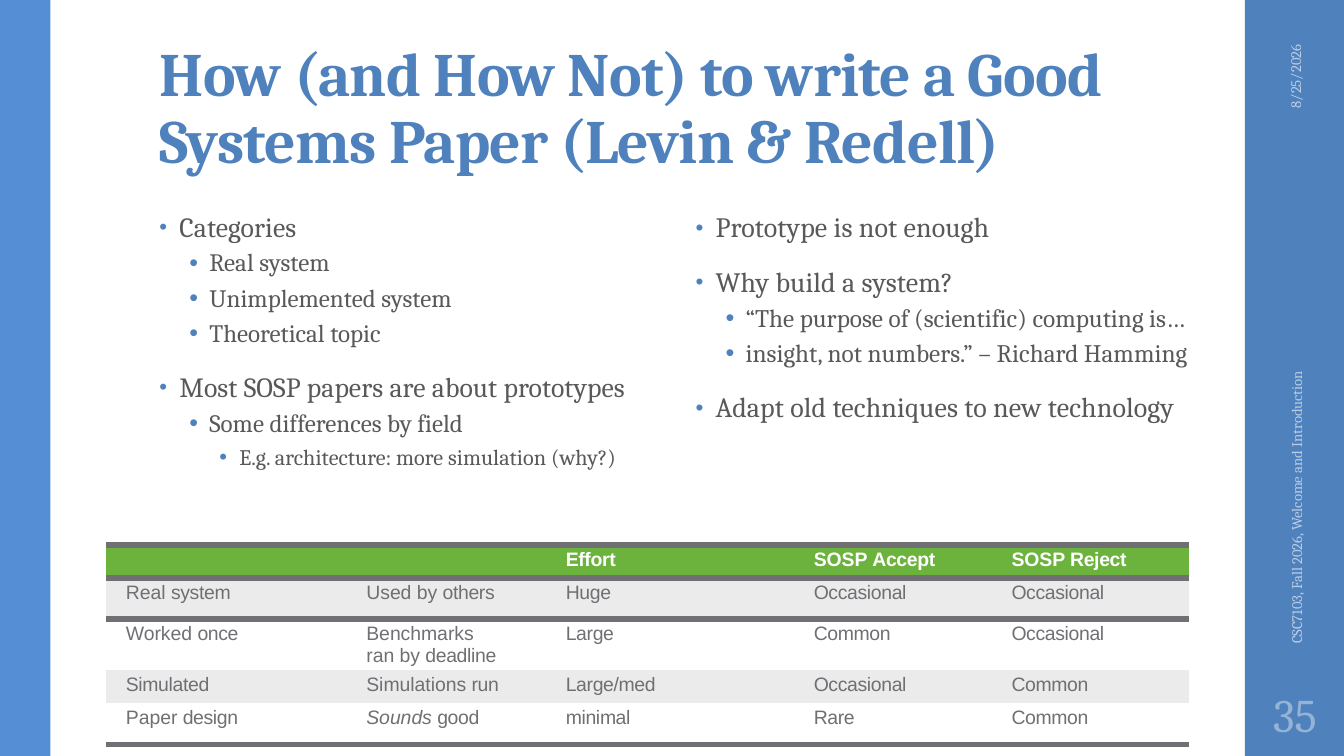
from lxml import etree
from pptx import Presentation
from pptx.dml.color import RGBColor
from pptx.enum import shapes, text
from pptx.oxml.ns import qn
from pptx.util import Pt

# Content
TITLE = "How (and How Not) to write a Good Systems Paper (Levin & Redell)"
COLUMNS = [
    {"box": (50.4, 72.8, 198, 172.8), "sizes": (10, 9, 8), "items": [
        (0, "Categories"),
        (1, "Real system"),
        (1, "Unimplemented system"),
        (1, "Theoretical topic"),
        (0, "Most SOSP papers are about prototypes"),
        (1, "Some differences by field"),
        (2, "E.g. architecture: more simulation (why?)"),
    ]},
    {"box": (243.7, 73, 203, 172.8), "sizes": (10.1, 9.1, 8.1), "items": [
        (0, "Prototype is not enough"),
        (0, "Why build a system?"),
        (1, "“The purpose of (scientific) computing is…"),
        (1, "insight, not numbers.” – Richard Hamming"),
        (0, "Adapt old techniques to new technology"),
    ]},
]
ROWS = [
    ("", "", "Effort", "SOSP Accept", "SOSP Reject"),
    ("Real system", "Used by others", "Huge", "Occasional", "Occasional"),
    ("Worked once", "Benchmarks ran by deadline", "Large", "Common", "Occasional"),
    ("Simulated", "Simulations run", "Large/med", "Occasional", "Common"),
    ("Paper design", "Sounds good", "minimal", "Rare", "Common"),
]
ITALIC = "Sounds "
DATE = "8/25/2026"
FOOTER = "CSC7103, Fall 2026, Welcome and Introduction"
NUMBER = "35"

# Format
W, H = 484.5, 272.5
BAR_LEFT = 448.8
BLUE, LIGHT_BLUE, PALE, NUMBER_BLUE = "4F81BD", "558ED5", "B9CDE5", "95B3D7"
BODY, GREY, GREEN, BAND, WHITE = "595959", "706F74", "6CB33E", "EBEBEB", "FFFFFF"
COL_WIDTHS = (69.4, 84.2, 67, 85, 85)
COL_INDENTS = (7.2, 24.5, 12.2, 34.6, 20.9)
ROW_HEIGHTS = (12, 14.7, 18.5, 12, 14.7)
RULES = {0: ("lnT", "lnB"), 1: ("lnT",), 4: ("lnB",)}  # ruled edges by row


def rgb(value):
    return RGBColor.from_string(value)


def apply(obj, values):
    for name, value in values.items():
        setattr(obj, name, value)


def points(*values):
    return [Pt(v) for v in values]


def add_run(p, words, size, color, font="Cambria", spacing=0, **style):
    r = p.add_run()
    r.text = words
    apply(r.font, {"name": font, "size": Pt(size), **style})
    r.font.color.rgb = rgb(color)
    if spacing:
        r.font._element.set("spc", str(round(spacing * 100)))


def add_label(box, words, size, color, align, rotation=0):
    sp = s.shapes.add_textbox(*points(*box))
    sp.rotation = rotation
    tf = sp.text_frame
    inset = Pt(7.2 if rotation else 3.6)
    apply(tf, {"word_wrap": True, "vertical_anchor": text.MSO_ANCHOR.MIDDLE,
               "margin_left": inset, "margin_right": inset})
    tf.paragraphs[0].alignment = align
    add_run(tf.paragraphs[0], words, size, color)


def add_bullet(p, level):
    pPr = p._p.get_or_add_pPr()
    pPr.set("marL", str(Pt(7.2 + 10.8 * level)))
    pPr.set("indent", str(Pt(-7.2)))
    clr = etree.SubElement(pPr, qn("a:buClr"))
    etree.SubElement(clr, qn("a:srgbClr"), val=BLUE)
    etree.SubElement(pPr, qn("a:buSzPct"), val="100000" if level else "80000")
    etree.SubElement(pPr, qn("a:buFont"), typeface="Arial")
    etree.SubElement(pPr, qn("a:buChar"), char="•")


def add_border(cell, side):
    ln = etree.SubElement(cell._tc.get_or_add_tcPr(), qn("a:" + side), w=str(Pt(2.25)))
    fill = etree.SubElement(ln, qn("a:solidFill"))
    etree.SubElement(fill, qn("a:srgbClr"), val=GREY)


prs = Presentation()
prs.slide_width, prs.slide_height = points(W, H)
s = prs.slides.add_slide(prs.slide_layouts[5])

# Side bars
for left, width, color in ((BAR_LEFT, W - BAR_LEFT, BLUE), (0, 18.2, LIGHT_BLUE)):
    sp = s.shapes.add_shape(shapes.MSO_SHAPE.RECTANGLE, *points(left, 0, width, H))
    sp.shadow.inherit = False
    sp.fill.solid()
    sp.fill.fore_color.rgb = rgb(color)
    sp.line.fill.background()

# Title
title = s.shapes.title
apply(title, dict(zip(("left", "top", "width", "height"), points(50.4, 11.8, 385.2, 55.4))))
tf = title.text_frame
apply(tf, {"word_wrap": True, "auto_size": text.MSO_AUTO_SIZE.NONE,
           "vertical_anchor": text.MSO_ANCHOR.BOTTOM,
           "margin_left": Pt(7.2), "margin_right": Pt(7.2),
           "margin_top": Pt(2.2), "margin_bottom": Pt(3.6)})
apply(tf.paragraphs[0], {"alignment": text.PP_ALIGN.LEFT, "line_spacing": 0.9})
add_run(tf.paragraphs[0], TITLE, 22.2, BLUE, spacing=-0.25, bold=True)

# Bullet columns
for column in COLUMNS:
    tf = s.shapes.add_textbox(*points(*column["box"])).text_frame
    tf.word_wrap = True
    for i, (level, words) in enumerate(column["items"]):
        p = tf.add_paragraph() if i else tf.paragraphs[0]
        add_bullet(p, level)
        before, after = (1.5, 1.5) if level else (7.1, 1)
        apply(p, {"level": level, "line_spacing": 0.9 if level else 0.95,
                  "space_before": Pt(before if i else 0), "space_after": Pt(after)})
        add_run(p, words, column["sizes"][level], BODY, spacing=0 if level else 0.05)

# Table
frame = s.shapes.add_table(len(ROWS), len(COL_WIDTHS),
                           *points(38.2, 196.4, sum(COL_WIDTHS), sum(ROW_HEIGHTS)))
table = frame.table
apply(table, {"first_row": False, "horz_banding": False})
table._tbl.tblPr.find(qn("a:tableStyleId")).text = "{2D5ABB26-0587-4C30-8999-92F81FD0307C}"
for col, width in zip(table.columns, COL_WIDTHS):
    col.width = Pt(width)
for i, (row, height) in enumerate(zip(ROWS, ROW_HEIGHTS)):
    table.rows[i].height = Pt(height)
    for j, words in enumerate(row):
        cell = table.cell(i, j)
        apply(cell, {"margin_left": Pt(COL_INDENTS[j]), "margin_right": Pt(11 if j == 1 else 0),
                     "margin_top": Pt(1.4), "margin_bottom": 0})
        for side in RULES.get(i, ()):
            add_border(cell, side)
        cell.fill.solid()
        cell.fill.fore_color.rgb = rgb(GREEN if i == 0 else BAND if i % 2 else WHITE)
        p = cell.text_frame.paragraphs[0]
        if not words:
            etree.SubElement(p._p, qn("a:endParaRPr"), sz="700")
            continue
        # The last word is set slightly tighter than the rest
        start, space, last = words.rpartition(" ")
        for part, spacing in ((start + space, 0), (last, -0.1)):
            if part:
                add_run(p, part, 7, GREY if i else WHITE, "Arial", spacing,
                        bold=i == 0, italic=part == ITALIC)

# Date, footer and slide number
add_label((429.1, 39.6, 75.6, 14.4), DATE, 5.3, PALE, text.PP_ALIGN.RIGHT, 270)
add_label((396, 160.6, 142.6, 14.4), FOOTER, 5.3, PALE, text.PP_ALIGN.LEFT, 270)
add_label((BAR_LEFT, 245.5, 36, 23.8), NUMBER, 16.8, NUMBER_BLUE, text.PP_ALIGN.CENTER)

prs.save("out.pptx")
